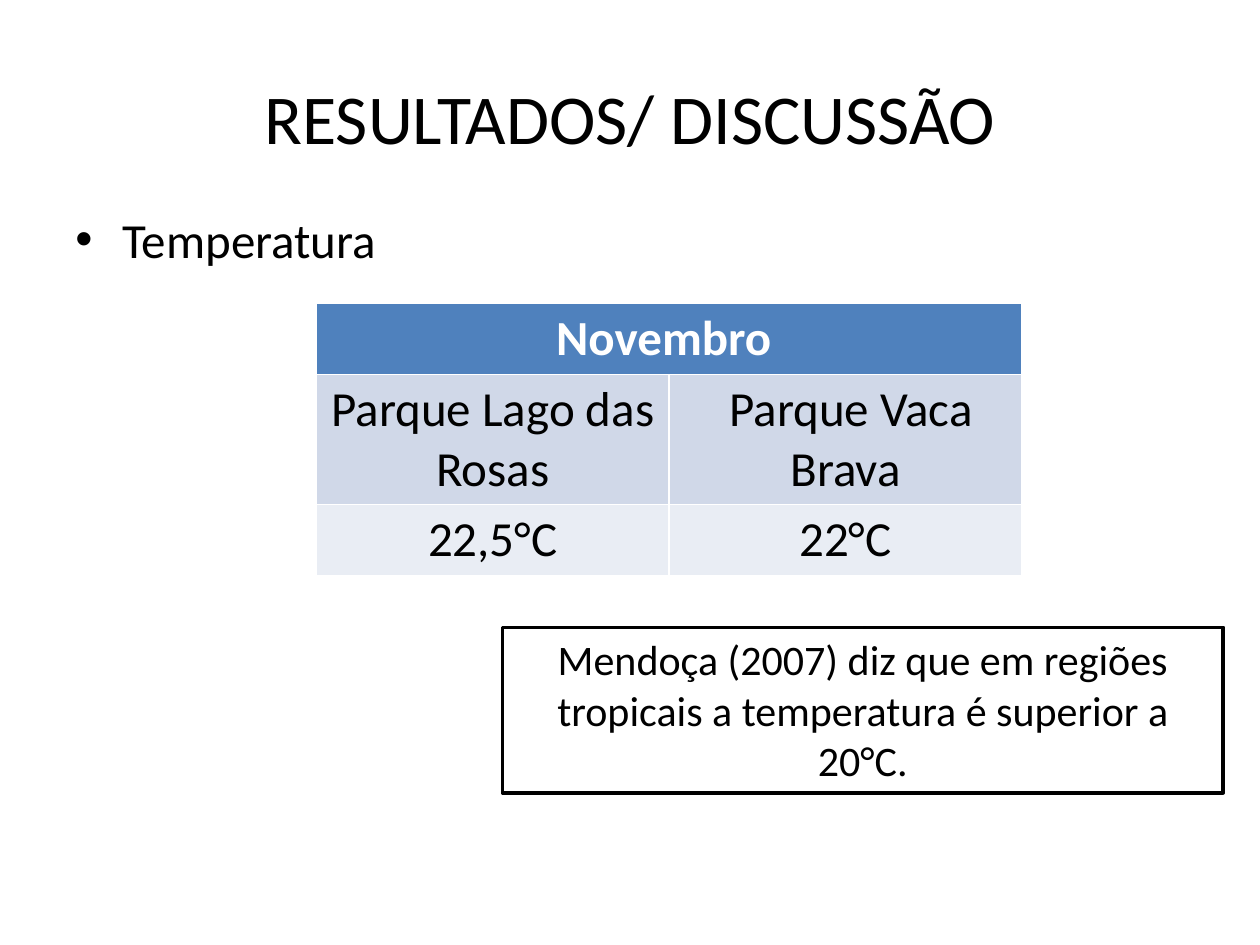
from lxml import etree
from pptx import Presentation, util as u
from pptx.dml.color import RGBColor
from pptx.enum import shapes, text
from pptx.oxml.ns import qn


def tint(code):
    return RGBColor.from_string(code)


def write(frame, words, size, color="000000", bold=False, align=text.PP_ALIGN.CENTER):
    frame.text = words
    frame.word_wrap = True
    para = frame.paragraphs[0]
    para.alignment = align
    font = para.runs[0].font
    font.name, font.size, font.bold = "Calibri", u.Pt(size), bold
    font.color.rgb = tint(color)
    return para


deck = Presentation()
deck.slide_width, deck.slide_height = u.Cm(25.4), u.Cm(19.05)
slide = deck.slides.add_slide(deck.slide_layouts[6])

# Title
title = slide.shapes.add_textbox(u.Cm(1.27), u.Cm(0.76), u.Cm(22.86), u.Cm(3.18))
write(title.text_frame, "RESULTADOS/ DISCUSSÃO", 40)
title.text_frame.vertical_anchor = text.MSO_ANCHOR.MIDDLE

# Bullet
body = slide.shapes.add_textbox(u.Cm(1.27), u.Cm(4.09), u.Cm(22.86), u.Cm(12.57))
para = write(body.text_frame, "Temperatura", 28, align=text.PP_ALIGN.LEFT)
props = para._p.get_or_add_pPr()
props.set("marL", str(u.Cm(0.95)))
props.set("indent", str(u.Cm(-0.95)))
etree.SubElement(props, qn("a:buFont")).set("typeface", "Arial")
etree.SubElement(props, qn("a:buChar")).set("char", "•")

# Note
note = slide.shapes.add_shape(
    shapes.MSO_SHAPE.RECTANGLE, u.Cm(10.13), u.Cm(12.65), u.Cm(14.53), u.Cm(3.33))
note.shadow.inherit = False
note.fill.solid()
note.fill.fore_color.rgb = tint("FFFFFF")
note.line.color.rgb = tint("000000")
note.line.width = u.Pt(2.25)
write(note.text_frame, "Mendoça (2007) diz que em regiões tropicais "
      "a temperatura é superior a 20°C.", 24)
note.text_frame.vertical_anchor = text.MSO_ANCHOR.TOP

# Temperature table: words, fill, font colour and height of each row
rows = [
    (["Novembro "], "4F81BD", "FFFFFF", 1.43),
    (["Parque Lago das Rosas", " Parque Vaca Brava"], "D0D8E8", "000000", 2.62),
    (["22,5°C", "22°C"], "E9EDF4", "000000", 1.43),
]
table = slide.shapes.add_table(
    3, 2, u.Cm(6.38), u.Cm(6.12), u.Cm(14.22), u.Cm(5.48)).table
table.cell(0, 0).merge(table.cell(0, 1))
for col in table.columns:
    col.width = u.Cm(7.11)
for r, (words, fill, color, height) in enumerate(rows):
    table.rows[r].height = u.Cm(height)
    for c in range(2):
        cell = table.cell(r, c)
        cell.fill.solid()
        cell.fill.fore_color.rgb = tint(fill)
        cell.margin_top = cell.margin_bottom = u.Cm(0.1)
        cell.vertical_anchor = text.MSO_ANCHOR.MIDDLE
        if c < len(words):
            write(cell.text_frame, words[c], 28, color, bold=r == 0)

deck.save("out.pptx")
